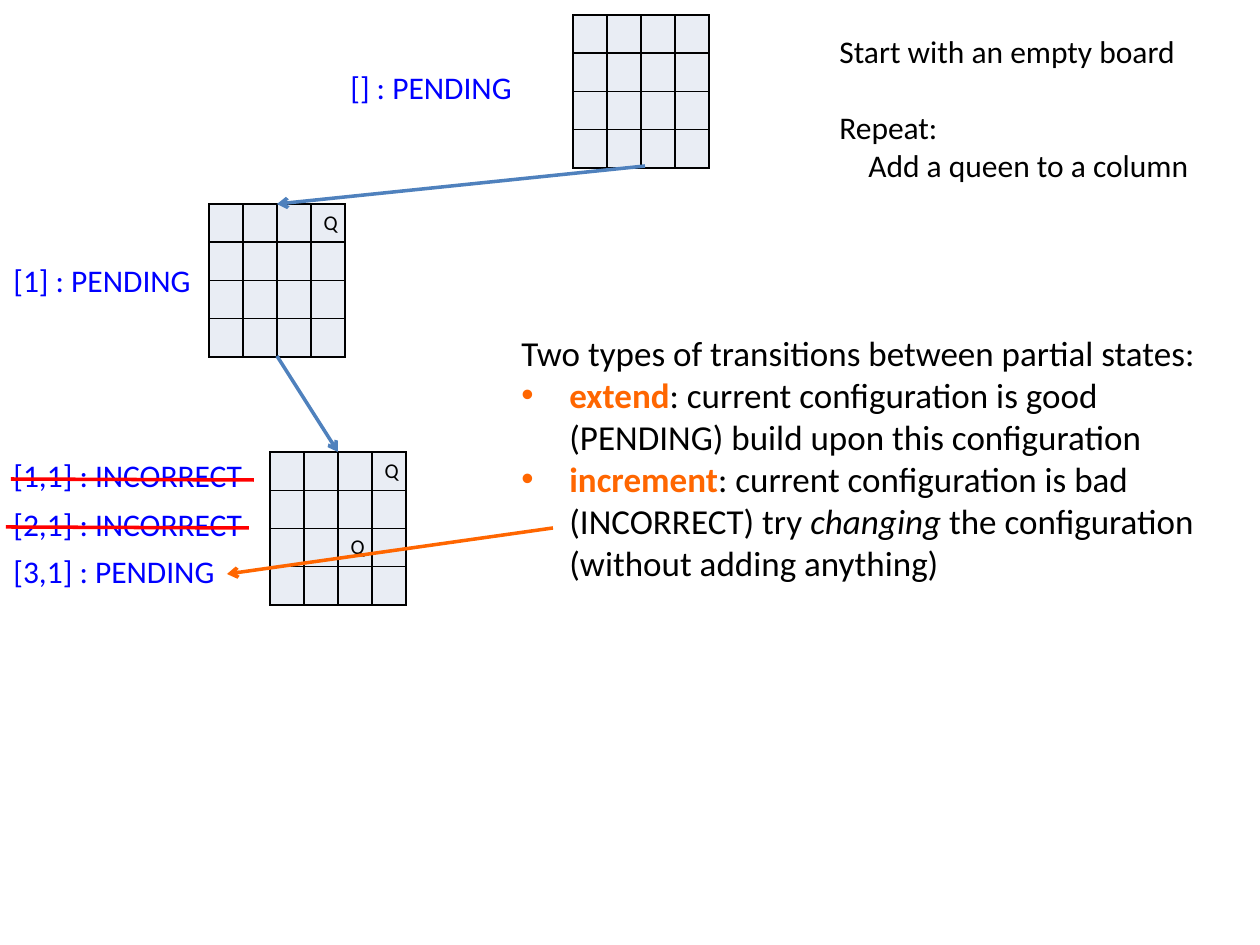
from lxml import etree
from pptx import Presentation, util as u
from pptx.dml.color import RGBColor
from pptx.enum import shapes, text
from pptx.oxml.ns import qn

SCALE = 914400 / 126
CELL_W, CELL_H, SIDE = 34, 38, 4
BLUE, ORANGE, BLACK, RED, STEEL = "0000FF", "FF6600", "000000", "FF0000", "4F81BD"
BOLD = {"bold": True, "color": ORANGE}


def px(n):
    return u.Emu(round(n * SCALE))


def hue(code):
    return RGBColor.from_string(code)


def apply(item, values):
    for key, value in values.items():
        setattr(item, key, value)


def write(par, words, size, color=BLACK, **form):
    run = par.add_run()
    run.text = words
    apply(run.font, {"name": "Calibri", "size": u.Pt(size), **form})
    run.font.color.rgb = hue(color)


def edge(cell):
    props = cell._tc.get_or_add_tcPr()
    for i, side in enumerate(("lnL", "lnR", "lnT", "lnB")):
        line = etree.Element(qn(f"a:{side}"), w=str(u.Pt(1)))
        fill = etree.SubElement(line, qn("a:solidFill"))
        etree.SubElement(fill, qn("a:srgbClr"), val=BLACK)
        props.insert(i, line)


def board(slide, left, top, queens=()):
    frame = slide.shapes.add_table(
        SIDE, SIDE, px(left), px(top), px(SIDE * CELL_W), px(SIDE * CELL_H))
    grid = frame.table
    for col in grid.columns:
        col.width = px(CELL_W)
    for r, row in enumerate(grid.rows):
        row.height = px(CELL_H)
        for c, cell in enumerate(row.cells):
            cell.fill.solid()
            cell.fill.fore_color.rgb = hue("E9EDF4")
            edge(cell)
            par = cell.text_frame.paragraphs[0]
            if (r, c) in queens:
                write(par, "Q", 12)
            else:
                etree.SubElement(par._p, qn("a:endParaRPr"), sz="1200")


def line(slide, start, end, color, arrow=False):
    link = slide.shapes.add_connector(
        shapes.MSO_CONNECTOR.STRAIGHT, *map(px, start + end))
    apply(link.line, {"width": u.Pt(2)})
    link.line.color.rgb = hue(color)
    if arrow:
        etree.SubElement(link.line._get_or_add_ln(), qn("a:tailEnd"), type="arrow")
    etree.SubElement(link._element.spPr, qn("a:effectLst"))


def box(slide, left, top, width, height, wrap=True):
    frame = slide.shapes.add_textbox(*map(px, (left, top, width, height))).text_frame
    apply(frame, {"word_wrap": wrap, "auto_size": text.MSO_AUTO_SIZE.SHAPE_TO_FIT_TEXT})
    return frame


def label(slide, left, top, width, words, wrap=True):
    write(box(slide, left, top, width, 50, wrap).paragraphs[0], words, 18, BLUE)


def bullet(par):
    props = par._p.get_or_add_pPr()
    apply_to = {"marL": str(px(48)), "indent": str(px(-48))}
    for key, value in apply_to.items():
        props.set(key, value)
    tint = etree.SubElement(props, qn("a:buClr"))
    etree.SubElement(tint, qn("a:srgbClr"), val=ORANGE)
    etree.SubElement(props, qn("a:buFont"), typeface="Arial")
    etree.SubElement(props, qn("a:buChar"), char="•")


def steps(slide):
    frame = box(slide, 827, 26, 378, 165, False)
    write(frame.paragraphs[0], "Start with an empty board", 18)
    again = frame.add_paragraph()
    again.space_before = u.Pt(22)
    write(again, "Repeat:", 18)
    add = frame.add_paragraph()
    add._p.get_or_add_pPr().set("marL", str(px(29)))
    write(add, "Add a queen to a column", 18)


def moves(slide):
    frame = box(slide, 509, 325, 721, 267)
    write(frame.paragraphs[0], "Two types of transitions between partial states:", 20)
    items = [
        [("extend", BOLD),
         (": current configuration is good (PENDING) build upon this configuration", {})],
        [("increment", BOLD),
         (": current configuration is bad (INCORRECT) try ", {}),
         ("changing", {"italic": True}),
         (" the configuration (without adding anything)", {})],
    ]
    for item in items:
        par = frame.add_paragraph()
        bullet(par)
        for words, form in item:
            write(par, words, 20, **form)


def main():
    deck = Presentation()
    apply(deck, {"slide_width": px(1260), "slide_height": px(945)})
    slide = deck.slides.add_slide(deck.slide_layouts[6])

    board(slide, 573, 15)
    board(slide, 209, 204, {(0, 3)})
    board(slide, 270, 452, {(0, 3), (2, 2)})
    line(slide, (645, 166), (277, 204), STEEL, True)
    line(slide, (277, 356), (338, 452), STEEL, True)

    steps(slide)
    label(slide, 1, 255, 208, "[1] : PENDING", False)
    label(slide, 338, 62, 189, "[] : PENDING", False)
    label(slide, 1, 546, 243, "[3,1] : PENDING")
    moves(slide)
    line(slide, (553, 528), (227, 574), ORANGE, True)
    label(slide, 1, 499, 273, "[2,1] : INCORRECT")
    label(slide, 1, 450, 273, "[1,1] : INCORRECT")
    line(slide, (6, 527), (249, 528), RED)
    line(slide, (11, 479), (254, 480), RED)

    deck.save("out.pptx")


if __name__ == "__main__":
    main()
